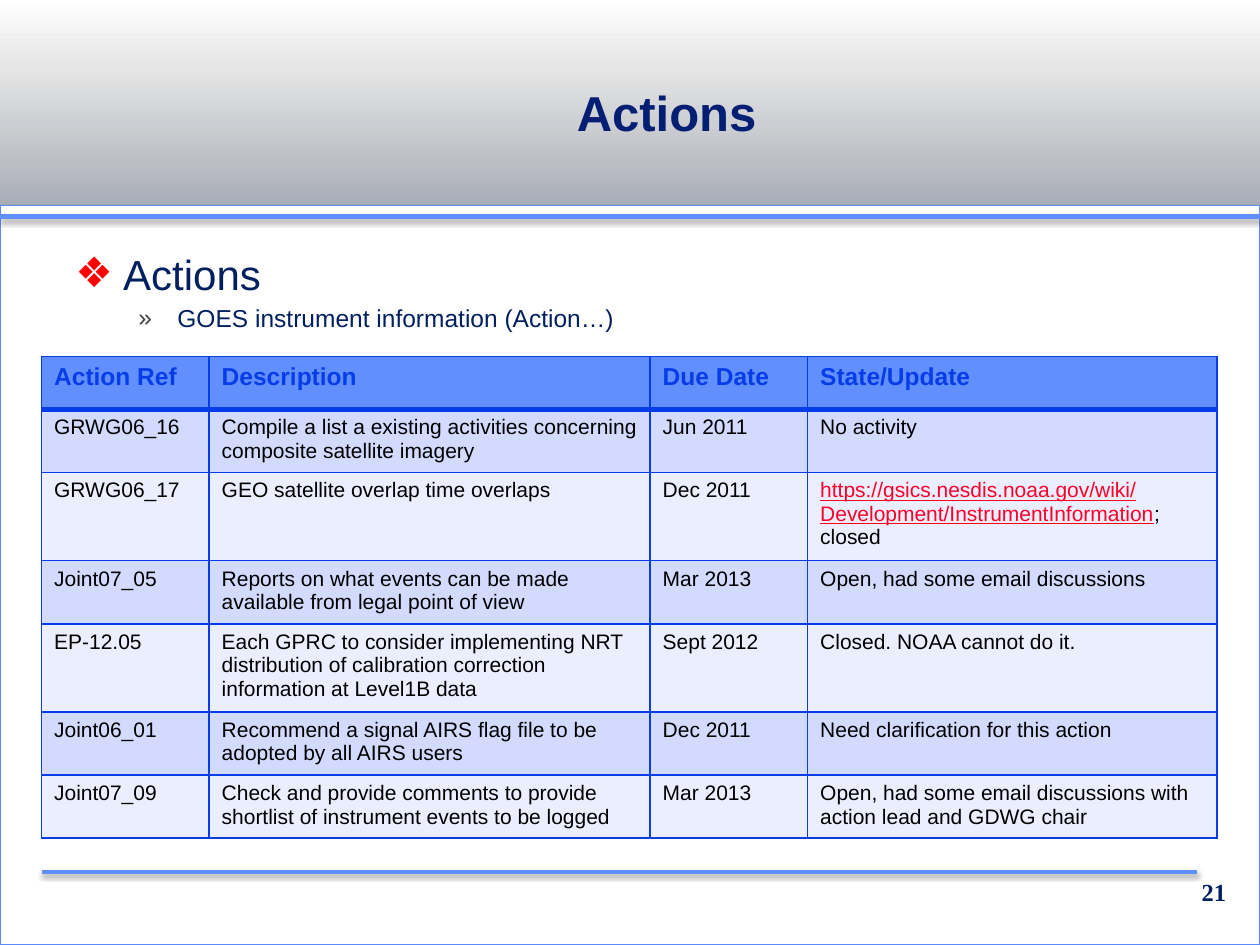
"""Builds the slide that lists actions and their state."""
import copy
from dataclasses import dataclass

import lxml.etree
import pptx
import pptx.dml.color
import pptx.enum.shapes
import pptx.enum.text
import pptx.oxml
import pptx.oxml.ns
import pptx.util

Inches = pptx.util.Inches
Pt = pptx.util.Pt
qn = pptx.oxml.ns.qn
Align = pptx.enum.text.PP_ALIGN
Anchor = pptx.enum.text.MSO_ANCHOR


@dataclass(frozen=True)
class Theme:
    """Colours, fonts and type sizes of the slide."""
    sans: str = "Arial"
    serif: str = "Times New Roman"
    title: str = "031F74"
    navy: str = "002060"
    diamond: str = "FF0000"
    chevron: str = "404040"
    panel: str = "FFFFFF"
    panel_edge: str = "5B8AFB"
    rule: str = "618FFD"
    grid: str = "063DE8"
    bands: tuple = ("D2DBFE", "EAEEFF")
    ink: str = "000000"
    address: str = "FC0128"
    backdrop: tuple = ((0, "FFFFFF"), (7, "E6E6E6"), (32, "7D8496"),
                       (47, "E6E6E6"), (85, "7D8496"), (100, "E6E6E6"))
    title_size: int = 28
    heading_size: int = 24
    label_size: int = 14
    cell_size: int = 12


THEME = Theme()
HEADERS = ("Action Ref", "Description", "Due Date", "State/Update")
ADDRESS = "https://gsics.nesdis.noaa.gov/wiki/Development/InstrumentInformation"
ACTIONS = (
    ("GRWG06_16", "Compile a list a existing activities concerning composite satellite imagery",
     "Jun 2011", "No activity"),
    ("GRWG06_17", "GEO satellite overlap time overlaps", "Dec 2011", ADDRESS + "; closed"),
    ("Joint07_05", "Reports on what events can be made available from legal point of view",
     "Mar 2013", "Open, had some email discussions"),
    ("EP-12.05", "Each GPRC to consider implementing NRT distribution of calibration "
     "correction information at Level1B data", "Sept 2012", "Closed. NOAA cannot do it."),
    ("Joint06_01", "Recommend a signal AIRS flag file to be adopted by all AIRS users",
     "Dec 2011", "Need clarification for this action"),
    ("Joint07_09", "Check and provide comments to provide shortlist of instrument events "
     "to be logged", "Mar 2013",
     "Open, had some email discussions with action lead and GDWG chair"),
)


def rgb(value):
    """Return a colour object for a hex value."""
    return pptx.dml.color.RGBColor.from_string(value)


def add_run(paragraph, text, size, color, font=THEME.sans, bold=False, underline=False):
    """Append one formatted run to a paragraph."""
    run = paragraph.add_run()
    run.text = text
    run.font.name, run.font.size = font, Pt(size)
    run.font.bold, run.font.underline = bold, underline
    run.font.color.rgb = rgb(color)


def add_shadow(shape, opacity, distance):
    """Give a shape a soft shadow that falls straight down."""
    shape._element.spPr.append(pptx.oxml.parse_xml(
        f'<a:effectLst {pptx.oxml.ns.nsdecls("a")}>'
        f'<a:outerShdw blurRad="{Pt(3.1)}" dist="{Pt(distance)}" dir="5400000" rotWithShape="0">'
        f'<a:srgbClr val="000000"><a:alpha val="{opacity * 1000}"/></a:srgbClr>'
        '</a:outerShdw></a:effectLst>'))


def paint_backdrop(slide):
    """Fill the background with the vertical grey gradient."""
    fill = slide.background.fill
    fill.gradient()
    fill.gradient_angle = 270
    stops = slide.background._cSld.find(".//" + qn("a:gsLst"))
    sample = copy.deepcopy(stops[0])
    for stop in list(stops):
        stops.remove(stop)
    for position, color in THEME.backdrop:
        stops.append(copy.deepcopy(sample))
        stop = fill.gradient_stops[-1]
        stop.position = position / 100
        stop.color.rgb = rgb(color)


def add_panel(slide):
    """Add the white content panel below the heading band."""
    panel = slide.shapes.add_shape(pptx.enum.shapes.MSO_SHAPE.RECTANGLE,
                                   Inches(0), Inches(1.63), Inches(10), Inches(5.87))
    panel.fill.solid()
    panel.fill.fore_color.rgb = rgb(THEME.panel)
    panel.line.color.rgb = rgb(THEME.panel_edge)
    panel.line.width = Pt(0.75)
    add_shadow(panel, 35, 1.8)


def add_rule(slide, left, right, y, width):
    """Add a horizontal blue rule."""
    rule = slide.shapes.add_connector(pptx.enum.shapes.MSO_CONNECTOR.STRAIGHT,
                                      Inches(left), Inches(y), Inches(right), Inches(y))
    rule.line.color.rgb = rgb(THEME.rule)
    rule.line.width = Pt(width)
    add_shadow(rule, 38, 1.6)


def set_title(slide, text):
    """Place and format the title placeholder."""
    title = slide.shapes.title
    title.left, title.top = Inches(1.83), Inches(0.5)
    title.width, title.height = Inches(6.92), Inches(0.67)
    frame = title.text_frame
    frame.auto_size = pptx.enum.text.MSO_AUTO_SIZE.NONE
    frame.vertical_anchor = Anchor.BOTTOM
    paragraph = frame.paragraphs[0]
    paragraph.alignment, paragraph.line_spacing = Align.CENTER, 0.85
    add_run(paragraph, text, THEME.title_size, THEME.title, bold=True)


def add_text_box(slide, left, top, width, height):
    """Add a wrapping text box and return its frame."""
    frame = slide.shapes.add_textbox(Inches(left), Inches(top),
                                     Inches(width), Inches(height)).text_frame
    frame.word_wrap = True
    return frame


def add_bullet(paragraph, mark, color, margin, hanging):
    """Give a paragraph a coloured bullet and a hanging indent."""
    properties = paragraph._p.get_or_add_pPr()
    properties.set("marL", str(Inches(margin)))
    properties.set("indent", str(-Inches(hanging)))
    tint = lxml.etree.SubElement(properties, qn("a:buClr"))
    lxml.etree.SubElement(tint, qn("a:srgbClr"), val=color)
    lxml.etree.SubElement(properties, qn("a:buFont"), typeface=THEME.sans)
    lxml.etree.SubElement(properties, qn("a:buChar"), char=mark)


def add_outline(slide):
    """Add the bulleted heading and its sub-point."""
    frame = add_text_box(slide, 0.5, 1.92, 9, 0.85)
    heading = frame.paragraphs[0]
    add_bullet(heading, "❖", THEME.diamond, 0.38, 0.38)
    add_run(heading, "Actions", THEME.heading_size, THEME.navy)
    topic = frame.add_paragraph()
    topic.level = 1
    add_bullet(topic, "»", THEME.chevron, 0.81, 0.31)
    topic.space_before = Pt(0.2 * THEME.label_size)
    add_run(topic, "GOES instrument information (Action…)", THEME.label_size, THEME.navy)


def style_cell(cell, fill, top=1, bottom=1):
    """Fill a cell and draw its four borders."""
    cell.fill.solid()
    cell.fill.fore_color.rgb = rgb(fill)
    properties = cell._tc.get_or_add_tcPr()
    for index, (side, width) in enumerate(zip("LRTB", (1, 1, top, bottom))):
        properties.insert(index, pptx.oxml.parse_xml(
            f'<a:ln{side} {pptx.oxml.ns.nsdecls("a")} w="{Pt(width)}"><a:solidFill>'
            f'<a:srgbClr val="{THEME.grid}"/></a:solidFill></a:ln{side}>'))


def add_action_table(slide):
    """Add the table of actions with its header row."""
    row_height = 0.42
    table = slide.shapes.add_table(len(ACTIONS) + 1, len(HEADERS), Inches(0.33), Inches(2.83),
                                   Inches(9.33), Inches(row_height * (len(ACTIONS) + 1))).table
    table.first_row = table.horz_banding = False
    for column, width in zip(table.columns, (1.33, 3.5, 1.25, 3.25)):
        column.width = Inches(width)
    for row in table.rows:
        row.height = Inches(row_height)
    for column, header in enumerate(HEADERS):
        cell = table.cell(0, column)
        style_cell(cell, THEME.rule, bottom=3)
        add_run(cell.text_frame.paragraphs[0], header, THEME.label_size, THEME.grid, bold=True)
    for row, action in enumerate(ACTIONS, 1):
        for column, text in enumerate(action):
            cell = table.cell(row, column)
            style_cell(cell, THEME.bands[(row - 1) % 2], top=3 if row == 1 else 1)
            paragraph = cell.text_frame.paragraphs[0]
            if text.startswith(ADDRESS):
                add_run(paragraph, ADDRESS, THEME.cell_size, THEME.address, underline=True)
            add_run(paragraph, text.removeprefix(ADDRESS), THEME.cell_size, THEME.ink)


def add_page_number(slide, number):
    """Add the page number at the lower right."""
    frame = add_text_box(slide, 7.75, 6.83, 2.08, 0.5)
    frame.vertical_anchor = Anchor.MIDDLE
    frame.paragraphs[0].alignment = Align.RIGHT
    add_run(frame.paragraphs[0], number, THEME.label_size, THEME.navy, THEME.serif, bold=True)


def main():
    """Build the slide and save it."""
    deck = pptx.Presentation()
    deck.slide_width, deck.slide_height = Inches(10), Inches(7.5)
    slide = deck.slides.add_slide(deck.slide_layouts[5])
    paint_backdrop(slide)
    add_panel(slide)
    add_rule(slide, 0, 10, 1.72, 2.8)
    add_rule(slide, 0.33, 9.5, 6.92, 2)
    set_title(slide, "Actions")
    add_page_number(slide, "21")
    add_outline(slide)
    add_action_table(slide)
    deck.save("out.pptx")


if __name__ == "__main__":
    main()
